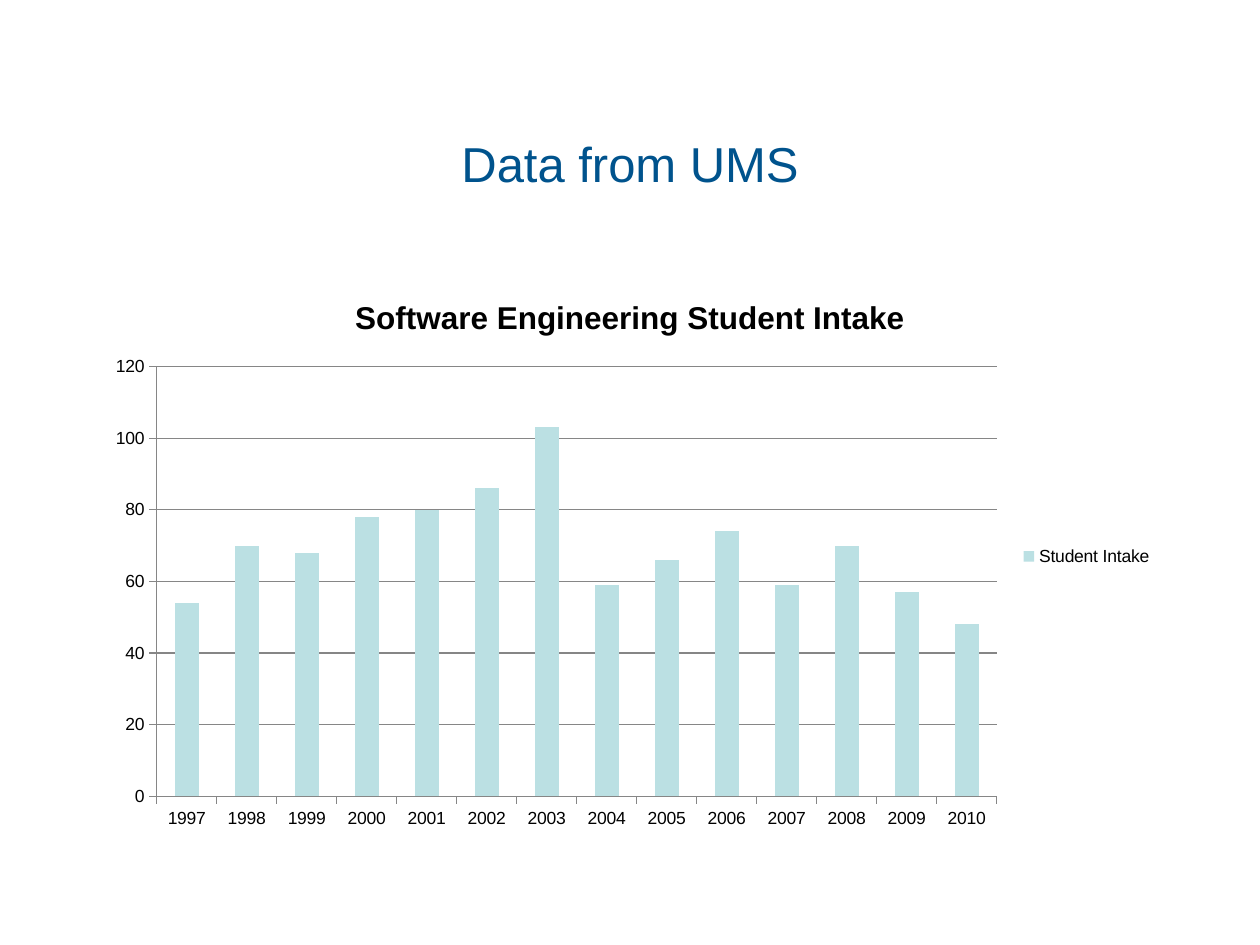
"""Build the slide showing yearly student intake as a column chart."""
from pptx import Presentation
from pptx import util as u
from pptx.chart.data import CategoryChartData
from pptx.dml.color import RGBColor
from pptx.enum import chart as ch, text

PX = 9525
FONT = "Arial"
BLUE = RGBColor(0x00, 0x53, 0x8D)
BLACK = RGBColor(0, 0, 0)
GREY = RGBColor(0x86, 0x86, 0x86)
AQUA = RGBColor(0xBB, 0xE0, 0xE3)
YEARS = [str(year) for year in range(1997, 2011)]
INTAKE = [54, 70, 68, 78, 80, 86, 103, 59, 66, 74, 59, 70, 57, 48]


def px(*lengths):
    """Turn whole pixels into EMU."""
    return [u.Emu(n * PX) for n in lengths]


def add_run(p, words, size, color, bold=False):
    """Add one formatted run to a paragraph."""
    r = p.add_run()
    r.text = words
    f = r.font
    f.name, f.size, f.bold = FONT, u.Pt(size), bold
    f.color.rgb = color


def set_title(s, words):
    """Place and fill the title placeholder."""
    sp = s.shapes.title
    sp.left, sp.top, sp.width, sp.height = px(72, 64, 816, 120)
    tf = sp.text_frame
    tf.word_wrap = True
    tf.vertical_anchor = text.MSO_ANCHOR.MIDDLE
    p = tf.paragraphs[0]
    p.alignment = text.PP_ALIGN.CENTER
    add_run(p, words, 28, BLUE)


def style_line(line):
    """Give an axis or gridline a thin grey stroke."""
    line.color.rgb = GREY
    line.width = u.Pt(0.75)


def style_axes(chart):
    """Format both axes and the horizontal gridlines."""
    for axis in (chart.category_axis, chart.value_axis):
        axis.major_tick_mark = ch.XL_TICK_MARK.OUTSIDE
        axis.minor_tick_mark = ch.XL_TICK_MARK.NONE
        style_line(axis.format.line)
    chart.category_axis.has_major_gridlines = False
    values = chart.value_axis
    values.minimum_scale, values.maximum_scale, values.major_unit = 0, 120, 20
    values.has_major_gridlines = True
    style_line(values.major_gridlines.format.line)


def add_intake_chart(s):
    """Add the column chart with its title and legend."""
    data = CategoryChartData()
    data.categories = YEARS
    data.add_series("Student Intake", INTAKE)
    chart = s.shapes.add_chart(
        ch.XL_CHART_TYPE.COLUMN_CLUSTERED, *px(72, 208, 816, 432), data).chart
    chart.font.name, chart.font.size = FONT, u.Pt(10)
    chart.font.color.rgb = BLACK
    chart.has_title = True
    title = chart.chart_title
    title.include_in_layout = False
    add_run(title.text_frame.paragraphs[0],
            "Software Engineering Student Intake", 18, BLACK, bold=True)
    chart.has_legend = True
    chart.legend.position = ch.XL_LEGEND_POSITION.RIGHT
    chart.legend.include_in_layout = False
    plot = chart.plots[0]
    plot.gap_width = 150
    plot.vary_by_categories = False
    fill = plot.series[0].format.fill
    fill.solid()
    fill.fore_color.rgb = AQUA
    style_axes(chart)


def main():
    """Create the presentation and save it."""
    prs = Presentation()
    prs.slide_width, prs.slide_height = px(960, 720)
    s = prs.slides.add_slide(prs.slide_layouts[5])
    set_title(s, "Data from UMS")
    add_intake_chart(s)
    prs.save("out.pptx")


if __name__ == "__main__":
    main()
